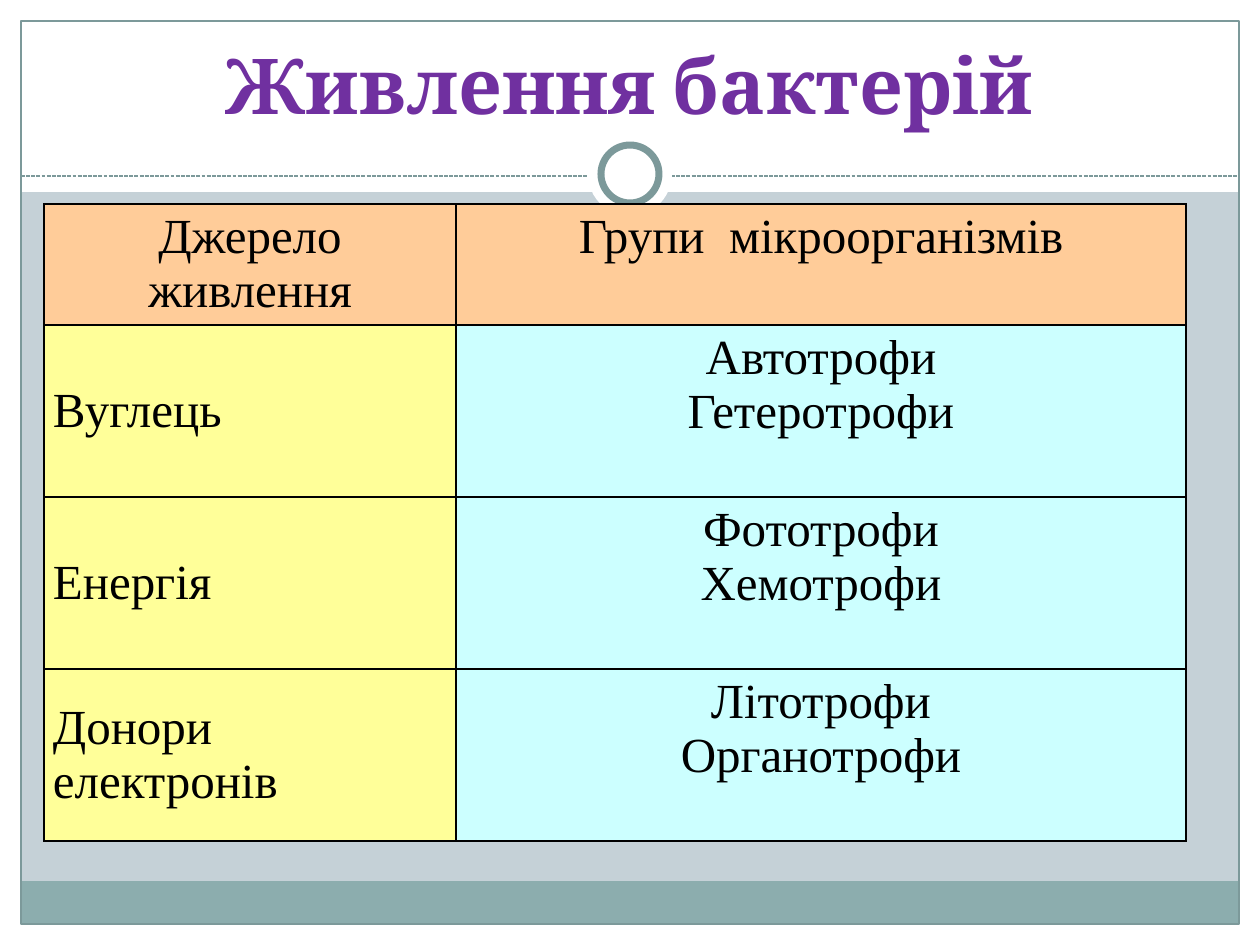
import pptx
import pptx.dml.color
import pptx.enum.dml
import pptx.enum.shapes
import pptx.enum.text
import pptx.oxml
import pptx.oxml.ns
import pptx.util

RGB = pptx.dml.color.RGBColor
SHAPE = pptx.enum.shapes.MSO_SHAPE
ALIGN = pptx.enum.text.PP_ALIGN
ANCHOR = pptx.enum.text.MSO_ANCHOR

WHITE = RGB(0xFF, 0xFF, 0xFF)
BLACK = RGB(0, 0, 0)
BACKGROUND = RGB(0xC5, 0xD1, 0xD7)
BAND = RGB(0x8C, 0xAD, 0xAE)
OUTLINE = RGB(0x7C, 0x99, 0x9A)
PURPLE = RGB(0x70, 0x30, 0xA0)
ORANGE = RGB(0xFF, 0xCC, 0x99)
YELLOW = RGB(0xFF, 0xFF, 0x99)
CYAN = RGB(0xCC, 0xFF, 0xFF)

TITLE = "Живлення бактерій"
ROWS = [
    ("Джерело живлення", "Групи  мiкроорганiзмiв"),
    ("Вуглець", "Автотрофи\nГетеротрофи"),
    ("Енергiя", "Фототрофи\nХемотрофи"),
    ("Донори електронiв", "Літотрофи\nОрганотрофи"),
]

WIDTH, HEIGHT = 1260, 945
MARGIN = 21
INNER = WIDTH - 2 * MARGIN
RULE_Y = 176
TABLE_LEFT, TABLE_TOP = 44, 204
COLUMN_WIDTHS = [412, 730]
ROW_HEIGHTS = [121, 172, 172, 172]

# shape, left, top, width, height, fill, line width in points
FRAME = [
    (SHAPE.RECTANGLE, 0, HEIGHT - MARGIN, WIDTH, MARGIN, WHITE, 0),
    (SHAPE.RECTANGLE, 0, 0, WIDTH, 192, WHITE, 0),
    (SHAPE.RECTANGLE, 0, 0, MARGIN, HEIGHT, WHITE, 0),
    (SHAPE.RECTANGLE, WIDTH - MARGIN, 0, MARGIN, HEIGHT, WHITE, 0),
    (SHAPE.RECTANGLE, MARGIN, 881, INNER, 43, BAND, 0),
    (SHAPE.RECTANGLE, MARGIN, MARGIN, INNER, HEIGHT - 2 * MARGIN, None, 0.75),
]
RING = [
    (SHAPE.OVAL, 588, 132, 84, 84, WHITE, 0),
    (SHAPE.OVAL, 601, 145, 58, 58, WHITE, 4),
]


def px(count):
    return pptx.util.Emu(round(count * 914400 / 126))


def add_shapes(page, parts):
    for kind, left, top, width, height, fill, line in parts:
        shape = page.shapes.add_shape(kind, px(left), px(top), px(width), px(height))
        shape.shadow.inherit = False
        if fill is None:
            shape.fill.background()
        else:
            shape.fill.solid()
            shape.fill.fore_color.rgb = fill
        if line:
            shape.line.color.rgb = OUTLINE
            shape.line.width = pptx.util.Pt(line)
        else:
            shape.line.fill.background()


def add_rule(page):
    rule = page.shapes.add_connector(
        pptx.enum.shapes.MSO_CONNECTOR.STRAIGHT,
        px(MARGIN), px(RULE_Y), px(WIDTH - MARGIN), px(RULE_Y))
    rule.line.color.rgb = OUTLINE
    rule.line.width = pptx.util.Pt(0.75)
    rule.line.dash_style = pptx.enum.dml.MSO_LINE.SQUARE_DOT
    properties = rule.element.spPr
    properties.append(properties.makeelement(pptx.oxml.ns.qn("a:effectLst"), {}))


def format_text(frame, font_name, size, color, align, bold=False):
    for para in frame.paragraphs:
        para.alignment = align
        for span in para.runs:
            span.font.name = font_name
            span.font.size = pptx.util.Pt(size)
            span.font.bold = bold
            span.font.color.rgb = color


def place_title(page):
    title = page.shapes.title
    title.left, title.top, title.width, title.height = px(42), px(32), px(1176), px(104)
    frame = title.text_frame
    frame.text = TITLE
    frame.word_wrap = True
    frame.auto_size = pptx.enum.text.MSO_AUTO_SIZE.NONE
    frame.vertical_anchor = ANCHOR.BOTTOM
    format_text(frame, "Cambria", 44, PURPLE, ALIGN.CENTER, bold=True)
    page.shapes.element.append(title.element)  # in front of the white frame


def add_borders(cell):
    properties = cell._tc.get_or_add_tcPr()
    for index, side in enumerate(("lnL", "lnR", "lnT", "lnB")):
        properties.insert(index, pptx.oxml.parse_xml(
            f'<a:{side} {pptx.oxml.ns.nsdecls("a")} w="12700"><a:solidFill>'
            f'<a:srgbClr val="{BLACK}"/></a:solidFill></a:{side}>'))


def add_food_table(page):
    table = page.shapes.add_table(
        len(ROWS), len(COLUMN_WIDTHS), px(TABLE_LEFT), px(TABLE_TOP),
        px(sum(COLUMN_WIDTHS)), px(sum(ROW_HEIGHTS))).table
    for column, width in zip(table.columns, COLUMN_WIDTHS):
        column.width = px(width)
    for r, (texts, height) in enumerate(zip(ROWS, ROW_HEIGHTS)):
        table.rows[r].height = px(height)
        for c, text in enumerate(texts):
            cell = table.cell(r, c)
            is_source = r > 0 and c == 0
            cell.text_frame.text = text
            cell.margin_left = cell.margin_right = px(9)
            cell.margin_top = cell.margin_bottom = px(6)
            cell.vertical_anchor = ANCHOR.MIDDLE if is_source else ANCHOR.TOP
            cell.fill.solid()
            cell.fill.fore_color.rgb = ORANGE if r == 0 else (YELLOW, CYAN)[c]
            format_text(cell.text_frame, "Times New Roman", 28, BLACK,
                        ALIGN.LEFT if is_source else ALIGN.CENTER)
            add_borders(cell)


def main():
    deck = pptx.Presentation()
    deck.slide_width, deck.slide_height = px(WIDTH), px(HEIGHT)
    page = deck.slides.add_slide(deck.slide_layouts[5])
    page.background.fill.solid()
    page.background.fill.fore_color.rgb = BACKGROUND
    add_shapes(page, FRAME)
    add_rule(page)
    add_shapes(page, RING)
    place_title(page)
    add_food_table(page)
    deck.save("out.pptx")


if __name__ == "__main__":
    main()
